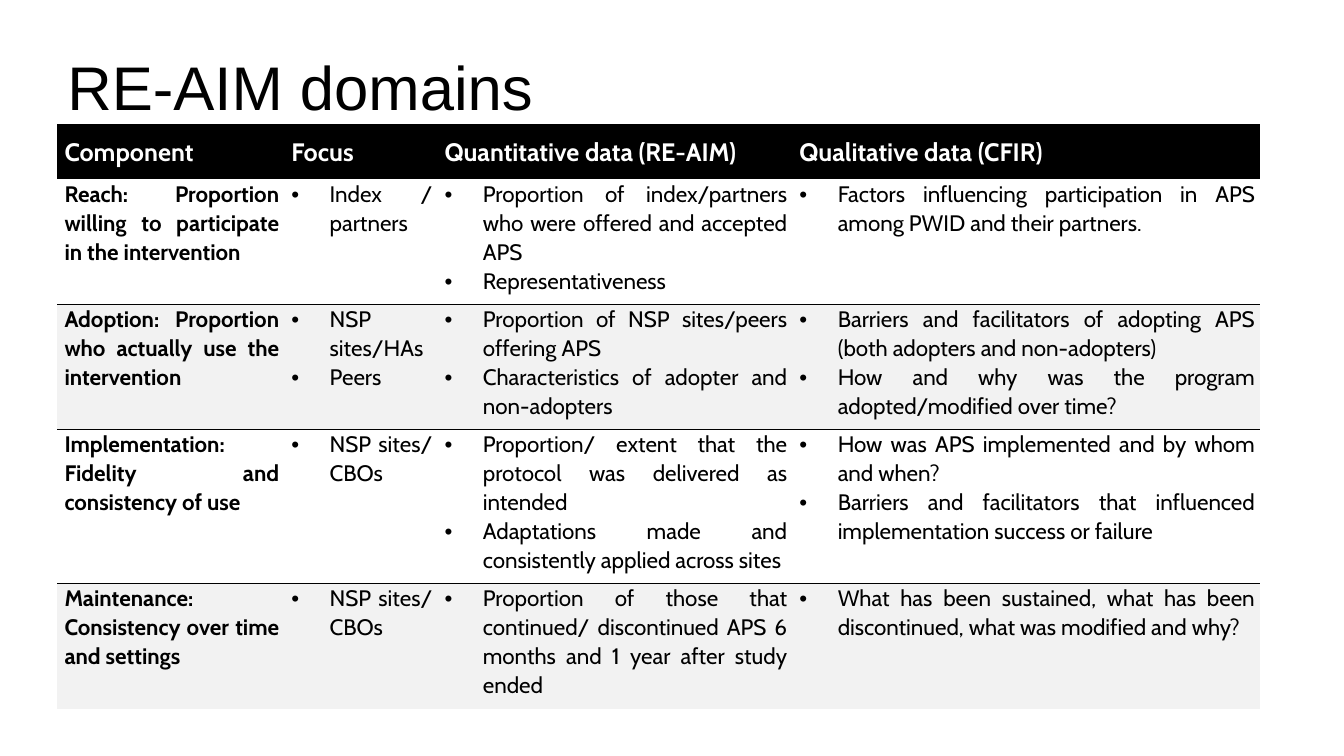
from lxml import etree
from pptx import Presentation
from pptx.dml.color import RGBColor
from pptx.enum.text import MSO_ANCHOR, PP_ALIGN
from pptx.oxml.ns import qn
from pptx.util import Inches, Pt

BLACK = RGBColor(0x00, 0x00, 0x00)
WHITE = RGBColor(0xFF, 0xFF, 0xFF)
BAND = RGBColor(0xF2, 0xF2, 0xF2)
JUSTIFY = PP_ALIGN.JUSTIFY
MIDDLE = MSO_ANCHOR.MIDDLE
TOP = MSO_ANCHOR.TOP
BOTTOM = MSO_ANCHOR.BOTTOM
PLAIN_STYLE = "{2D5ABB26-0587-4C30-8999-92F81FD0307C}"

LEFT, WIDTH = 0.57, 11.93
TITLE_BOX = (LEFT, 0.12, WIDTH, 1.16)
TABLE_BOX = (LEFT, 1.23, WIDTH, 5.8)
COLUMN_WIDTHS = (2.25, 1.52, 3.52, 4.64)
ROW_HEIGHTS = (0.55, 1.24, 1.24, 1.53, 1.24)
HANGING = 0.38

HEADINGS = ("Component", "Focus", "Quantitative data (RE-AIM)", "Qualitative data (CFIR)")
DOMAINS = (
    (
        ["Reach: Proportion willing to participate in the intervention"],
        ["Index / partners"],
        ["Proportion of index/partners who were offered and accepted APS", "Representativeness"],
        ["Factors influencing participation in APS among PWID and their partners."],
    ),
    (
        ["Adoption: Proportion who actually use the intervention"],
        ["NSP sites/HAs", "Peers"],
        ["Proportion of NSP sites/peers offering APS",
         "Characteristics of adopter and non-adopters"],
        ["Barriers and facilitators of adopting APS (both adopters and non-adopters)",
         "How and why was the program adopted/modified over time?"],
    ),
    (
        ["Implementation: Fidelity and consistency of use"],
        ["NSP sites/ CBOs"],
        ["Proportion/ extent that the protocol was delivered as intended",
         "Adaptations made and consistently applied across sites"],
        ["How was APS implemented and by whom and when?",
         "Barriers and facilitators that influenced implementation success or failure"],
    ),
    (
        ["Maintenance: Consistency over time and settings"],
        ["NSP sites/ CBOs"],
        ["Proportion of those that continued/ discontinued APS 6 months and 1 year after study ended"],
        ["What has been sustained, what has been discontinued, what was modified and why?"],
    ),
)


def style_paragraph(paragraph, font_name, size, color, bold, spacing):
    paragraph.line_spacing = spacing
    font = paragraph.font
    font.name, font.size, font.bold = font_name, Pt(size), bold
    font.color.rgb = color


def add_bullet(paragraph):
    properties = paragraph._p.get_or_add_pPr()
    properties.set("marL", str(Inches(HANGING)))
    properties.set("indent", str(-Inches(HANGING)))
    bullet_font = etree.Element(qn("a:buFont"), typeface="Arial")
    bullet = etree.Element(qn("a:buChar"), char="•")
    properties.find(qn("a:lnSpc")).addnext(bullet_font)
    bullet_font.addnext(bullet)


def add_top_rule(cell):
    line = etree.Element(qn("a:lnT"), w=str(Pt(1)))
    fill = etree.SubElement(line, qn("a:solidFill"))
    etree.SubElement(fill, qn("a:srgbClr"), val=str(BLACK))
    cell._tc.get_or_add_tcPr().insert(0, line)


def fill_cell(cell, lines, size, color, bold, bulleted):
    cell.margin_left, cell.margin_right = Inches(0.07), Inches(0.05)
    cell.margin_bottom = Inches(0.09)
    text_frame = cell.text_frame
    text_frame.text = "\n".join(lines)
    for paragraph in text_frame.paragraphs:
        paragraph.alignment = JUSTIFY
        style_paragraph(paragraph, "Cabin", size, color, bold, 1.07)
        if bulleted:
            add_bullet(paragraph)


def add_title(slide, box):
    shape = slide.shapes.add_textbox(*map(Inches, box))
    text_frame = shape.text_frame
    text_frame.word_wrap = True
    text_frame.vertical_anchor = BOTTOM
    text_frame.text = "RE-AIM domains"
    style_paragraph(text_frame.paragraphs[0], "Arial", 44, BLACK, False, 0.9)


def add_domain_table(slide, box):
    shape = slide.shapes.add_table(len(ROW_HEIGHTS), len(COLUMN_WIDTHS), *map(Inches, box))
    table = shape.table
    table._tbl.tblPr.find(qn("a:tableStyleId")).text = PLAIN_STYLE
    for column, width in zip(table.columns, COLUMN_WIDTHS):
        column.width = Inches(width)
    for row, height in zip(table.rows, ROW_HEIGHTS):
        row.height = Inches(height)

    for column_index, heading in enumerate(HEADINGS):
        cell = table.cell(0, column_index)
        fill_cell(cell, [heading], 18, WHITE, True, False)
        cell.margin_top = Inches(0.09)
        cell.vertical_anchor = MIDDLE
        cell.fill.solid()
        cell.fill.fore_color.rgb = BLACK

    for row_index, domain in enumerate(DOMAINS, start=1):
        for column_index, lines in enumerate(domain):
            cell = table.cell(row_index, column_index)
            is_component = column_index == 0
            fill_cell(cell, lines, 16, BLACK, is_component, not is_component)
            cell.margin_top = 0
            cell.vertical_anchor = TOP
            if row_index % 2 == 0:
                cell.fill.solid()
                cell.fill.fore_color.rgb = BAND
                add_top_rule(cell)
            else:
                cell.fill.background()


def main():
    presentation = Presentation()
    presentation.slide_width = Inches(13.33)
    presentation.slide_height = Inches(7.5)
    slide = presentation.slides.add_slide(presentation.slide_layouts[6])
    add_title(slide, TITLE_BOX)
    add_domain_table(slide, TABLE_BOX)
    presentation.save("out.pptx")


if __name__ == "__main__":
    main()
